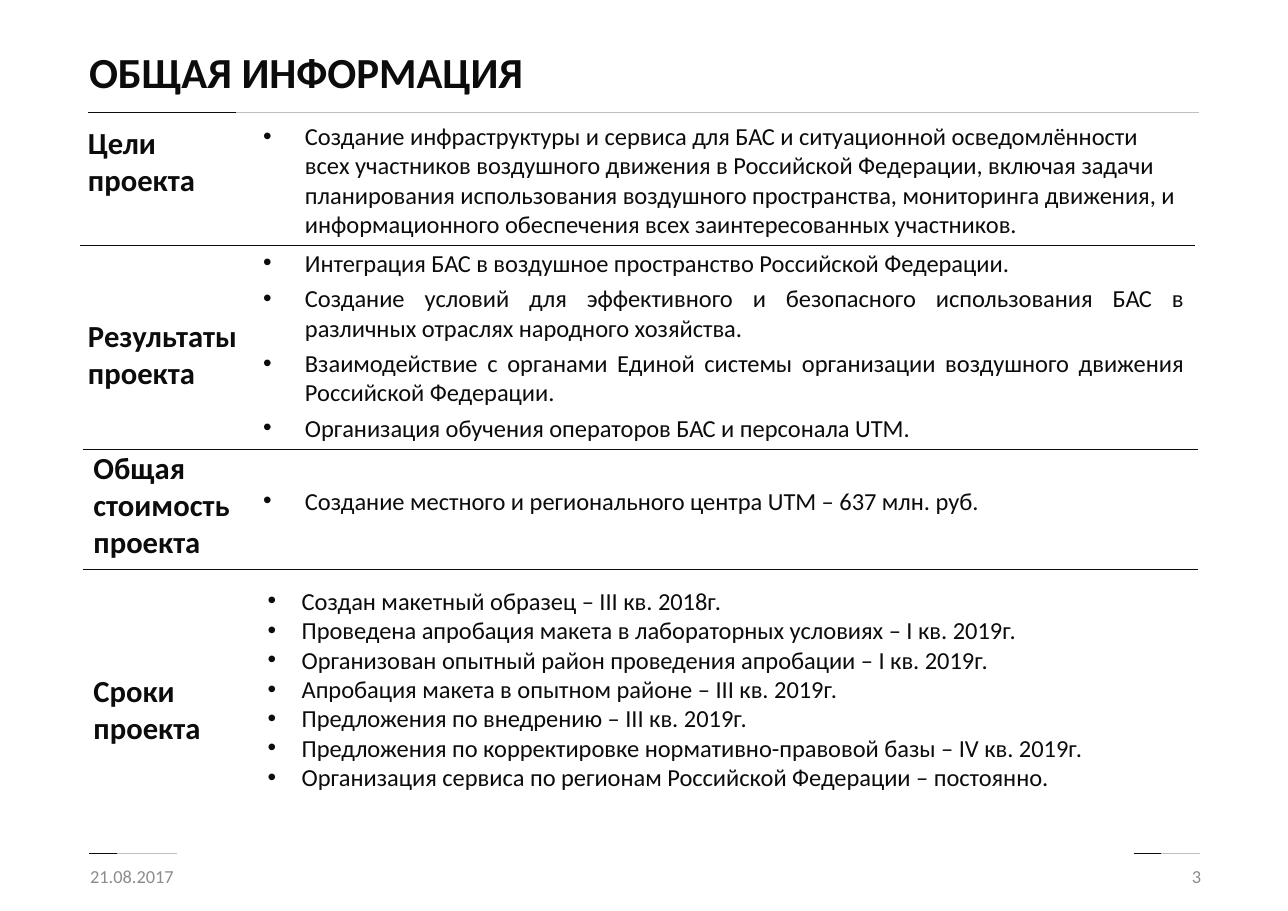
from dataclasses import dataclass

from lxml import etree
from pptx import Presentation
from pptx import util as u
from pptx.dml.color import RGBColor
from pptx.enum import shapes, text
from pptx.oxml import ns


@dataclass(frozen=True)
class Theme:
    font: str = "Calibri"
    ink: str = "0C0C0C"
    rule: str = "BFBFBF"
    muted: str = "8C8C8C"
    title: int = 28
    label: int = 20
    body: int = 16
    footer: int = 12
    hairline: float = 0.5


class SlideBuilder:
    def __init__(self, slide, theme):
        self.slide = slide
        self.theme = theme

    def line(self, left, right, top, color):
        rule = self.slide.shapes.add_connector(
            shapes.MSO_CONNECTOR.STRAIGHT,
            u.Inches(left), u.Inches(top), u.Inches(right), u.Inches(top))
        rule.line.color.rgb = RGBColor.from_string(color)
        rule.line.width = u.Pt(self.theme.hairline)
        etree.SubElement(rule._element.spPr, ns.qn("a:effectLst"))

    def accent_line(self, left, right, top, accent):
        self.line(left, right, top, self.theme.rule)
        self.line(left, left + accent, top, self.theme.ink)

    def frame(self, box, anchor):
        frame = self.slide.shapes.add_textbox(*map(u.Inches, box)).text_frame
        frame.word_wrap = True
        frame.vertical_anchor = anchor
        return frame

    def style(self, paragraph, size, color, bold=False):
        font = paragraph.font
        font.name = self.theme.font
        font.size = u.Pt(size)
        font.bold = bold
        font.color.rgb = RGBColor.from_string(color)

    def title(self, words, box):
        heading = self.frame(box, text.MSO_ANCHOR.MIDDLE).paragraphs[0]
        heading.text = words
        heading.line_spacing = 0.9
        self.style(heading, self.theme.title, self.theme.ink, True)

    def label(self, words, box):
        label = self.frame(box, text.MSO_ANCHOR.TOP).paragraphs[0]
        label.text = words
        self.style(label, self.theme.label, self.theme.ink, True)

    def footer(self, words, box, align):
        footer = self.frame(box, text.MSO_ANCHOR.MIDDLE).paragraphs[0]
        footer.text = words
        footer.alignment = align
        self.style(footer, self.theme.footer, self.theme.muted)

    def bullets(self, items, box, indent, gap=0, align=text.PP_ALIGN.LEFT):
        frame = self.frame(box, text.MSO_ANCHOR.TOP)
        frame.auto_size = text.MSO_AUTO_SIZE.SHAPE_TO_FIT_TEXT
        for index, item in enumerate(items):
            point = frame.add_paragraph() if index else frame.paragraphs[0]
            point.text = item
            properties = point._p.get_or_add_pPr()
            properties.set("marL", str(u.Inches(indent)))
            properties.set("indent", str(-u.Inches(indent)))
            etree.SubElement(properties, ns.qn("a:buFont"), typeface="Arial")
            etree.SubElement(properties, ns.qn("a:buChar"), char="•")
            point.alignment = align
            point.space_before = u.Pt(gap if index else 0)
            self.style(point, self.theme.body, self.theme.ink)


GOALS = [
    "Создание инфраструктуры и сервиса для БАС и ситуационной осведомлённости "
    "всех участников воздушного движения в Российской Федерации, включая задачи "
    "планирования использования воздушного пространства, мониторинга движения, и "
    "информационного обеспечения всех заинтересованных участников.",
]
RESULTS = [
    "Интеграция БАС в воздушное пространство Российской Федерации.",
    "Создание условий для эффективного и безопасного использования БАС в "
    "различных отраслях народного хозяйства.",
    "Взаимодействие с органами Единой системы организации воздушного движения "
    "Российской Федерации.",
    "Организация обучения операторов БАС и персонала UTM.",
]
COST = ["Создание местного и регионального центра UTM – 637 млн. руб."]
SCHEDULE = [
    "Создан макетный образец – III кв. 2018г.",
    "Проведена апробация макета в лабораторных условиях – I кв. 2019г.",
    "Организован опытный район проведения апробации – I кв. 2019г.",
    "Апробация макета в опытном районе – III кв. 2019г.",
    "Предложения по внедрению – III кв. 2019г.",
    "Предложения по корректировке нормативно-правовой базы – IV кв. 2019г.",
    "Организация сервиса по регионам Российской Федерации – постоянно.",
]


def main():
    deck = Presentation()
    deck.slide_width = u.Inches(11.69)
    deck.slide_height = u.Inches(8.27)
    theme = Theme()
    page = SlideBuilder(deck.slides.add_slide(deck.slide_layouts[6]), theme)

    page.accent_line(0.8, 10.88, 1.02, 1.34)
    page.accent_line(10.29, 10.89, 7.75, 0.25)
    page.accent_line(0.81, 1.61, 7.75, 0.25)

    page.title("ОБЩАЯ ИНФОРМАЦИЯ", (0.71, 0.28, 7.97, 0.8))
    page.footer("21.08.2017", (0.72, 7.73, 2.63, 0.44), text.PP_ALIGN.LEFT)
    page.footer("3", (8.37, 7.73, 2.63, 0.44), text.PP_ALIGN.RIGHT)

    page.label("Цели проекта", (0.7, 1.08, 1.39, 1.38))
    page.bullets(GOALS, (2.29, 1.05, 8.56, 1.18), 0.38)

    page.label("Результаты проекта", (0.7, 2.83, 1.62, 2.38))
    page.bullets(RESULTS, (2.29, 2.2, 8.56, 1.88), 0.38, 4, text.PP_ALIGN.JUSTIFY)

    page.label("Общая стоимость проекта", (0.75, 4.03, 1.84, 1.14))
    page.bullets(COST, (2.29, 4.36, 8.56, 0.37), 0.38)

    page.label("Сроки проекта", (0.75, 6.05, 1.39, 0.46))
    page.bullets(SCHEDULE, (2.33, 5.27, 8.55, 1.99), 0.31)

    for left, top in ((0.73, 2.23), (0.75, 4.08), (0.75, 5.17)):
        page.line(left, left + 10.12, top, theme.ink)

    deck.save("out.pptx")


if __name__ == "__main__":
    main()
